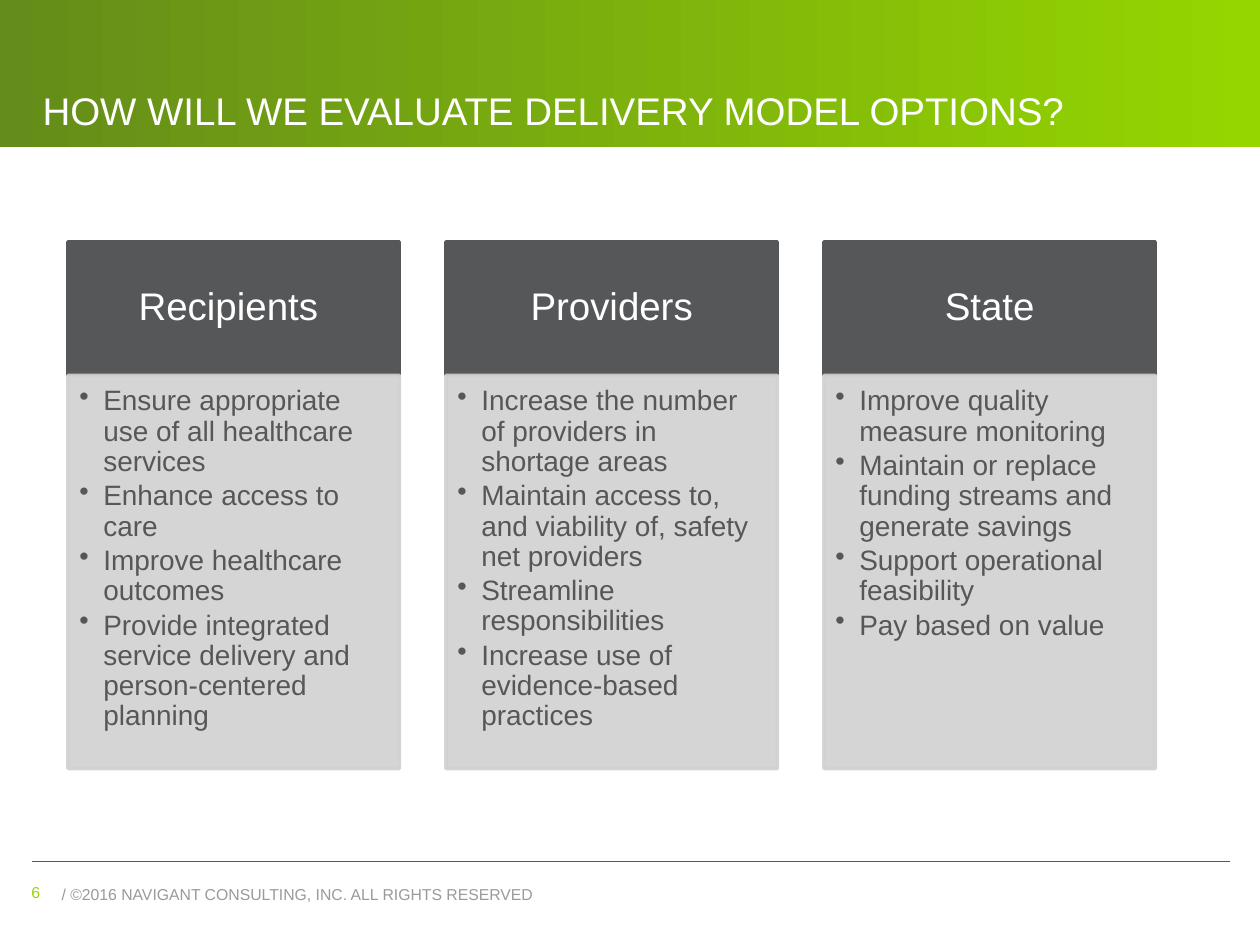
"""Build the slide on evaluating delivery model options."""
from dataclasses import dataclass

import lxml.etree
import pptx
import pptx.dml.color
import pptx.enum.shapes
import pptx.enum.text
import pptx.oxml.ns
import pptx.util

Inches = pptx.util.Inches
Pt = pptx.util.Pt
qn = pptx.oxml.ns.qn
Align = pptx.enum.text.PP_ALIGN
Anchor = pptx.enum.text.MSO_ANCHOR

FONT = "Arial"
COLORS = {
    "white": "FFFFFF",
    "lime": "95D600",
    "olive": "648C1A",
    "slate": "555759",
    "panel": "D1D1D1",
    "footer": "989A9D",
}


@dataclass(frozen=True)
class Box:
    left: float
    top: float
    width: float
    height: float

    def lengths(self) -> tuple:
        return tuple(Inches(n) for n in (self.left, self.top, self.width, self.height))


@dataclass(frozen=True)
class Label:
    text: str
    box: Box
    size: int
    color: str
    anchor: Anchor = Anchor.TOP


@dataclass(frozen=True)
class Column:
    heading: str
    goals: tuple[str, ...]


LABELS = (
    Label("/ ©2016 NAVIGANT CONSULTING, INC. ALL RIGHTS RESERVED",
          Box(0.39, 6.97, 6.37, 0.22), 9, "footer"),
    Label("6", Box(0.15, 6.96, 0.68, 0.23), 9, "lime"),
    Label("HOW WILL WE EVALUATE DELIVERY MODEL OPTIONS?",
          Box(0.24, 0, 9.53, 1.11), 22, "white", Anchor.BOTTOM),
)

COLUMNS = (
    Column("Recipients ", (
        "Ensure appropriate use of all healthcare services",
        "Enhance access to care",
        "Improve healthcare outcomes",
        "Provide integrated service delivery and person-centered planning",
    )),
    Column("Providers", (
        "Increase the number of providers in shortage areas",
        "Maintain access to, and viability of, safety net providers",
        "Streamline responsibilities",
        "Increase use of evidence-based practices",
    )),
    Column("State", (
        "Improve quality measure monitoring",
        "Maintain or replace funding streams and generate savings",
        "Support operational feasibility",
        "Pay based on value",
    )),
)
COLUMN_LEFT, COLUMN_PITCH, COLUMN_WIDTH = 0.54, 3.0, 2.63
HEADING_TOP, HEADING_HEIGHT = 1.92, 1.05
PANEL_TOP, PANEL_HEIGHT = 2.98, 3.12


def rgb(name: str) -> pptx.dml.color.RGBColor:
    return pptx.dml.color.RGBColor.from_string(COLORS[name])


def style(paragraph, size: int, color: str) -> None:
    paragraph.font.name = FONT
    paragraph.font.size = Pt(size)
    paragraph.font.color.rgb = rgb(color)


def set_margins(frame, left: float, top: float, right: float, bottom: float) -> None:
    frame.word_wrap = True
    frame.margin_left, frame.margin_top = Inches(left), Inches(top)
    frame.margin_right, frame.margin_bottom = Inches(right), Inches(bottom)


def add_rectangle(slide, box: Box):
    shape = slide.shapes.add_shape(pptx.enum.shapes.MSO_SHAPE.RECTANGLE, *box.lengths())
    shape.shadow.inherit = False
    return shape


def add_block(slide, box: Box, color: str, opacity: int = 100):
    shape = add_rectangle(slide, box)
    shape.fill.solid()
    shape.fill.fore_color.rgb = rgb(color)
    shape.line.color.rgb = rgb(color)
    shape.line.width = Pt(2)
    if opacity < 100:
        for element in shape.element.spPr.iter(qn("a:srgbClr")):
            lxml.etree.SubElement(element, qn("a:alpha"), val=str(opacity * 1000))
    return shape


def add_banner(slide) -> None:
    banner = add_rectangle(slide, Box(0, 0, 10, 1.17))
    banner.line.fill.background()
    banner.fill.gradient()
    banner.fill.gradient_angle = 0
    for stop, color in zip(banner.fill.gradient_stops, ("olive", "lime")):
        stop.color.rgb = rgb(color)


def add_footer_rule(slide) -> None:
    rule = slide.shapes.add_connector(
        pptx.enum.shapes.MSO_CONNECTOR.STRAIGHT,
        Inches(0.25), Inches(6.84), Inches(9.76), Inches(6.84))
    rule.line.color.rgb = rgb("slate")
    rule.line.width = Pt(0.75)
    lxml.etree.SubElement(rule.element.spPr, qn("a:effectLst"))


def add_label(slide, label: Label) -> None:
    frame = slide.shapes.add_textbox(*label.box.lengths()).text_frame
    frame.word_wrap = True
    frame.vertical_anchor = label.anchor
    frame.text = label.text
    style(frame.paragraphs[0], label.size, label.color)


def add_goal(paragraph, text: str) -> None:
    paragraph.text = text
    paragraph.level = 1
    paragraph.alignment = Align.LEFT
    paragraph.line_spacing = 0.9
    paragraph.space_after = Pt(2.4)
    properties = paragraph._p.get_or_add_pPr()
    properties.set("marL", str(Inches(0.19)))
    properties.set("indent", str(-Inches(0.19)))
    lxml.etree.SubElement(properties, qn("a:buChar"), char="•")
    style(paragraph, 16, "slate")


def add_column(slide, column: Column, left: float) -> None:
    heading_box = Box(left, HEADING_TOP, COLUMN_WIDTH, HEADING_HEIGHT)
    heading = add_block(slide, heading_box, "slate").text_frame
    set_margins(heading, 0.17, 0.1, 0.17, 0.1)
    heading.vertical_anchor = Anchor.MIDDLE
    heading.text = column.heading
    paragraph = heading.paragraphs[0]
    paragraph.alignment = Align.CENTER
    paragraph.line_spacing = 0.9
    style(paragraph, 22, "white")

    panel_box = Box(left, PANEL_TOP, COLUMN_WIDTH, PANEL_HEIGHT)
    panel = add_block(slide, panel_box, "panel", opacity=90).text_frame
    set_margins(panel, 0.09, 0.09, 0.12, 0.14)
    panel.vertical_anchor = Anchor.TOP
    for index, goal in enumerate(column.goals):
        add_goal(panel.add_paragraph() if index else panel.paragraphs[0], goal)


def main() -> None:
    presentation = pptx.Presentation()
    presentation.slide_width, presentation.slide_height = Inches(10), Inches(7.5)
    slide = presentation.slides.add_slide(presentation.slide_layouts[6])
    add_footer_rule(slide)
    add_banner(slide)
    for label in LABELS:
        add_label(slide, label)
    for index, column in enumerate(COLUMNS):
        add_column(slide, column, COLUMN_LEFT + index * COLUMN_PITCH)
    presentation.save("out.pptx")


if __name__ == "__main__":
    main()
